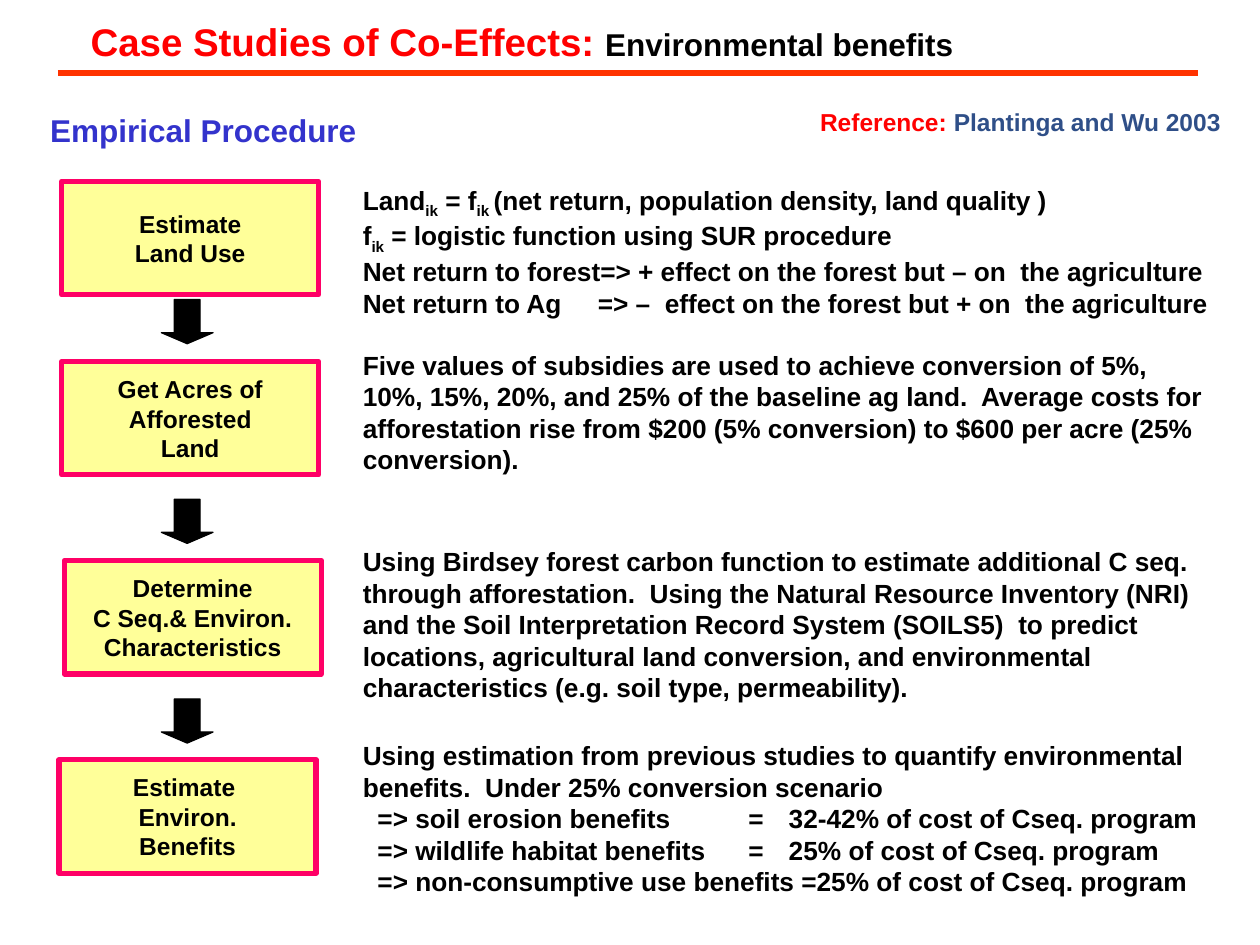
import pptx
import pptx.util
import pptx.dml.color
import pptx.enum.shapes
import pptx.enum.text
import pptx.oxml.ns
import lxml.etree
from dataclasses import dataclass

Pt = pptx.util.Pt
SHAPE = pptx.enum.shapes.MSO_SHAPE
ALIGN = pptx.enum.text.PP_ALIGN
ANCHOR = pptx.enum.text.MSO_ANCHOR


@dataclass(frozen=True)
class Theme:
    font: str = "Arial"
    ink: str = "000000"
    red: str = "FF0000"
    rule: str = "FF3300"
    heading: str = "3333CC"
    citation: str = "2F4F88"
    step_fill: str = "FFFF99"
    step_line: str = "FF0066"
    title_size: int = 22
    heading_size: int = 18
    body_size: int = 15
    small_size: int = 14


THEME = Theme()

TITLE = [[("Case Studies of Co-Effects: ", {"size": THEME.title_size, "color": THEME.red}),
          ("Environmental benefits", {"size": THEME.heading_size})]]
HEADING = ["Empirical Procedure"]
REFERENCE = [[("Reference:", {"color": THEME.red}),
              (" Plantinga and Wu 2003", {"color": THEME.citation})]]
SUB = {"baseline": -25000}

STEPS = [
    {"label": ["Estimate", "Land Use"], "left": 35.3, "top": 103.7,
     "detail_top": 101.5, "detail_height": 79.2, "tabs": [134.3],
     "detail": [
         ["Land", ("ik", SUB), " = f", ("ik ", SUB),
          "(net return, population density, land quality )"],
         ["f", ("ik", SUB), " = logistic function using SUR procedure"],
         "Net return to forest=> + effect on the forest but – on  the agriculture",
         "Net return to Ag\t=> –  effect on the forest but + on  the agriculture"]},
    {"label": ["Get Acres of", "Afforested", "Land"], "left": 35.3, "top": 206.6,
     "detail_top": 195.8, "detail_height": 79.2, "tabs": [],
     "detail": [
         "Five values of subsidies are used to achieve conversion of 5%, 10%, 15%, 20%, "
         "and 25% of the baseline ag land.  Average costs for afforestation rise from "
         "$200 (5% conversion) to $600 per acre (25% conversion)."]},
    {"label": ["Determine", "C Seq.& Environ.", "Characteristics"], "left": 36.7, "top": 320.4,
     "detail_top": 308.2, "detail_height": 97.2, "tabs": [],
     "detail": [
         "Using Birdsey forest carbon function to estimate additional C seq. through "
         "afforestation.  Using the Natural Resource Inventory (NRI) and the Soil "
         "Interpretation Record System (SOILS5)  to predict locations, agricultural land "
         "conversion, and environmental characteristics (e.g. soil type, permeability)."]},
    {"label": ["Estimate ", "Environ.", "Benefits"], "left": 33.8, "top": 434.2,
     "detail_top": 419, "detail_height": 97.2, "tabs": [8.4, 220.3, 243.4],
     "detail": [
         "Using estimation from previous studies to quantify environmental benefits.  "
         "Under 25% conversion scenario",
         "\t=> soil erosion benefits\t=\t32-42% of cost of Cseq. program",
         "\t=> wildlife habitat benefits\t=\t25% of cost of Cseq. program",
         "\t=> non-consumptive use benefits =25% of cost of Cseq. program"]},
]

STEP_WIDTH, STEP_HEIGHT = 146.9, 64.8
DETAIL_LEFT, DETAIL_WIDTH = 200.2, 500.4
ARROW_LEFT, ARROW_TOP, ARROW_PITCH = 92.2, 171.2, 114.1
ARROW_WIDTH, ARROW_HEIGHT = 29.5, 25.2


def rgb(value):
    return pptx.dml.color.RGBColor.from_string(value)


def place(shape, left, top, width, height):
    shape.left, shape.top = Pt(left), Pt(top)
    shape.width, shape.height = Pt(width), Pt(height)


def add_tabs(para, positions):
    properties = para._p.get_or_add_pPr()
    tab_list = lxml.etree.SubElement(properties, pptx.oxml.ns.qn("a:tabLst"))
    for position in positions:
        lxml.etree.SubElement(tab_list, pptx.oxml.ns.qn("a:tab"),
                              pos=str(Pt(position)), algn="l")


def write_text(shape, lines, size=THEME.body_size, color=THEME.ink, align=ALIGN.LEFT,
               anchor=ANCHOR.TOP, wrap=True, tabs=()):
    frame = shape.text_frame
    frame.auto_size = pptx.enum.text.MSO_AUTO_SIZE.NONE
    frame.word_wrap = wrap
    frame.vertical_anchor = anchor
    for index, line in enumerate(lines):
        para = frame.paragraphs[0] if index == 0 else frame.add_paragraph()
        para.alignment = align
        if tabs:
            add_tabs(para, tabs)
        for part in [line] if isinstance(line, str) else line:
            text, style = (part, {}) if isinstance(part, str) else part
            span = para.add_run()
            span.text = text
            span.font.name = THEME.font
            span.font.bold = True
            span.font.size = Pt(style.get("size", size))
            span.font.color.rgb = rgb(style.get("color", color))
            if "baseline" in style:
                span.font._element.set("baseline", str(style["baseline"]))


def add_text(page, lines, left, top, width, height, **style):
    box = page.shapes.add_textbox(Pt(left), Pt(top), Pt(width), Pt(height))
    write_text(box, lines, **style)


def add_block(page, kind, left, top, width, height, fill, line, weight):
    block = page.shapes.add_shape(kind, Pt(left), Pt(top), Pt(width), Pt(height))
    block.shadow.inherit = False
    block.fill.solid()
    block.fill.fore_color.rgb = rgb(fill)
    block.line.color.rgb = rgb(line)
    block.line.width = Pt(weight)
    return block


def add_rule(page, left, right, top):
    rule = page.shapes.add_connector(pptx.enum.shapes.MSO_CONNECTOR.STRAIGHT,
                                     Pt(left), Pt(top), Pt(right), Pt(top))
    rule.line.color.rgb = rgb(THEME.rule)
    rule.line.width = Pt(3)
    lxml.etree.SubElement(rule._element.spPr, pptx.oxml.ns.qn("a:effectLst"))


def main():
    deck = pptx.Presentation()
    deck.slide_width, deck.slide_height = Pt(720), Pt(540)
    page = deck.slides.add_slide(deck.slide_layouts.get_by_name("Title Only"))

    place(page.shapes.title, 44.6, 6.5, 509, 33.8)
    write_text(page.shapes.title, TITLE, wrap=False)
    add_rule(page, 33.1, 684.7, 41.8)
    add_text(page, HEADING, 21.6, 59.8, 189.4, 28.8,
             size=THEME.heading_size, color=THEME.heading, wrap=False)
    add_text(page, REFERENCE, 461.5, 57.6, 244.1, 23.8, size=THEME.small_size)

    for index, step in enumerate(STEPS):
        block = add_block(page, SHAPE.RECTANGLE, step["left"], step["top"], STEP_WIDTH,
                          STEP_HEIGHT, THEME.step_fill, THEME.step_line, 3)
        write_text(block, step["label"], size=THEME.small_size, align=ALIGN.CENTER,
                   anchor=ANCHOR.MIDDLE, wrap=False)
        add_text(page, step["detail"], DETAIL_LEFT, step["detail_top"], DETAIL_WIDTH,
                 step["detail_height"], tabs=step["tabs"])
        if index < len(STEPS) - 1:
            arrow = add_block(page, SHAPE.DOWN_ARROW, ARROW_LEFT,
                              ARROW_TOP + index * ARROW_PITCH, ARROW_WIDTH, ARROW_HEIGHT,
                              THEME.ink, THEME.ink, 0.75)
            arrow.adjustments[0], arrow.adjustments[1] = 0.5, 0.25

    deck.save("out.pptx")


if __name__ == "__main__":
    main()
